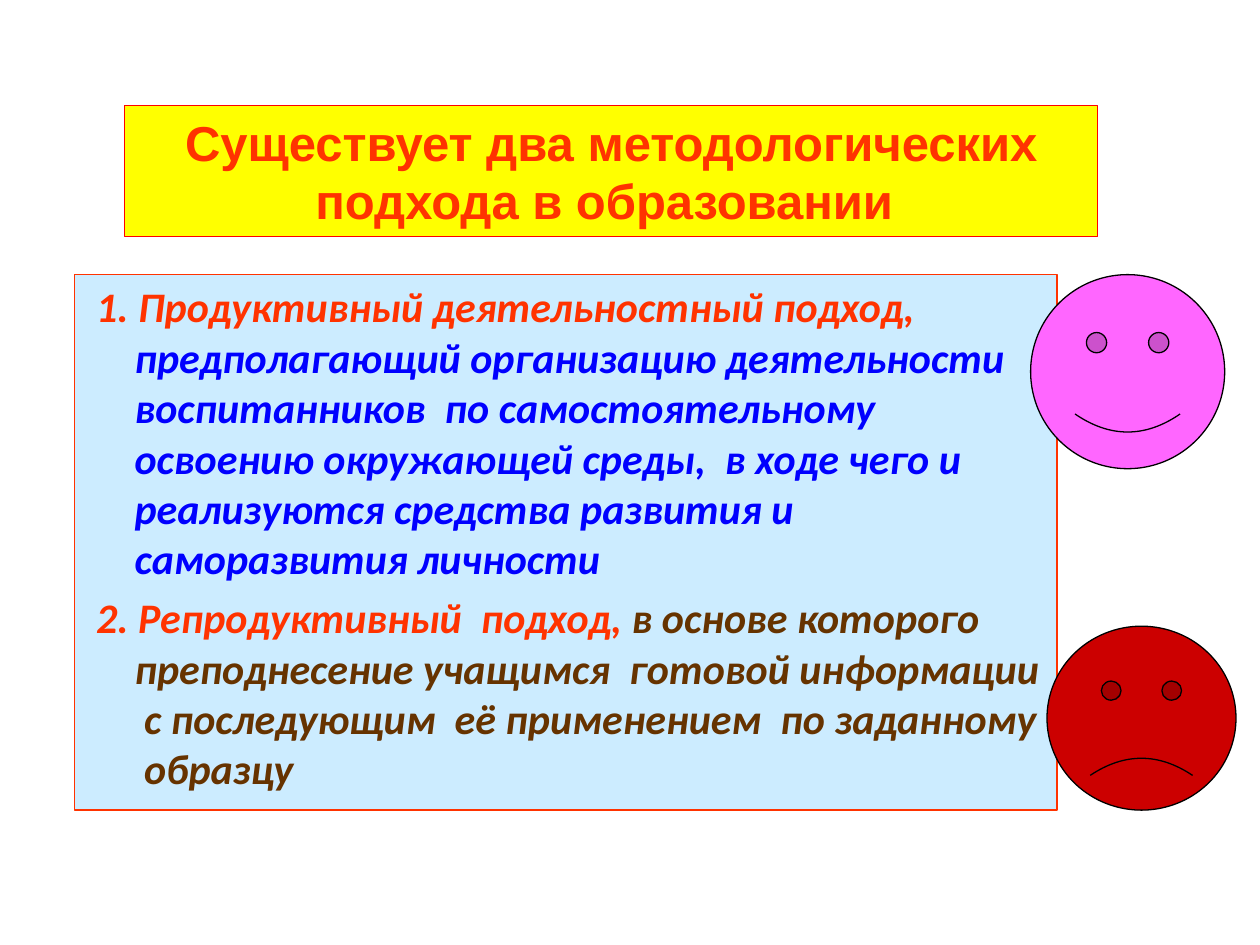
from pptx import Presentation
from pptx.dml.color import RGBColor
from pptx.enum.shapes import MSO_SHAPE as Preset
from pptx.enum.text import MSO_ANCHOR as Anchor, PP_ALIGN as Align
from pptx.util import Inches, Pt

RED = "FF3300"
APPROACHES = [
    [(" 1. Продуктивный деятельностный подход, ", RED),
     ("предполагающий организацию деятельности воспитанников  по "
      "самостоятельному освоению окружающей среды,  в ходе чего и "
      "реализуются средства развития и саморазвития личности", "0000FF")],
    [(" 2. Репродуктивный  подход, ", RED),
     ("в основе которого преподнесение учащимся  готовой информации  "
      "с последующим  её применением  по заданному  образцу", "663300")],
]


def color(value):
    return RGBColor.from_string(value)


def add_box(slide, preset, box, fill, line):
    shape = slide.shapes.add_shape(preset, *map(Inches, box))
    shape.shadow.inherit = False
    shape.fill.solid()
    shape.fill.fore_color.rgb = color(fill)
    shape.line.color.rgb = color(line)
    shape.line.width = Pt(0.75)
    shape.text_frame.word_wrap = True
    shape.text_frame.vertical_anchor = Anchor.TOP
    return shape


def style_run(run, font_name, size, value, italic=False):
    run.font.name = font_name
    run.font.size = Pt(size)
    run.font.bold = True
    run.font.italic = italic
    run.font.color.rgb = color(value)


def add_title(slide, box):
    shape = add_box(slide, Preset.RECTANGLE, box, "FFFF00", "FF0000")
    shape.text_frame.text = "Существует два методологических подхода в образовании "
    paragraph = shape.text_frame.paragraphs[0]
    paragraph.alignment = Align.CENTER
    paragraph.space_before = Pt(12)
    style_run(paragraph.runs[0], "Arial", 28, RED)


def add_approaches(slide, box):
    shape = add_box(slide, Preset.RECTANGLE, box, "CCECFF", RED)
    text_frame = shape.text_frame
    for index, parts in enumerate(APPROACHES):
        paragraph = text_frame.add_paragraph() if index else text_frame.paragraphs[0]
        paragraph.alignment = Align.LEFT
        paragraph.space_before = Pt(4.8)
        properties = paragraph._p.get_or_add_pPr()
        properties.set("marL", str(Inches(0.38)))
        properties.set("indent", str(-Inches(0.38)))
        for text, value in parts:
            run = paragraph.add_run()
            run.text = text
            style_run(run, "Calibri", 24, value, italic=True)


def add_face(slide, box, fill, smile):
    face = add_box(slide, Preset.SMILEY_FACE, box, fill, "000000")
    face.adjustments[0] = smile


def main():
    presentation = Presentation()
    presentation.slide_width = Inches(10)
    presentation.slide_height = Inches(7.5)
    slide = presentation.slides.add_slide(presentation.slide_layouts[6])
    add_approaches(slide, (0.59, 2.18, 7.8, 4.25))
    add_title(slide, (0.99, 0.84, 7.72, 1.04))
    add_face(slide, (8.31, 4.97, 1.5, 1.46), "CC0000", -0.047)
    add_face(slide, (8.18, 2.18, 1.54, 1.54), "FF66FF", 0.047)
    presentation.save("out.pptx")


if __name__ == "__main__":
    main()
